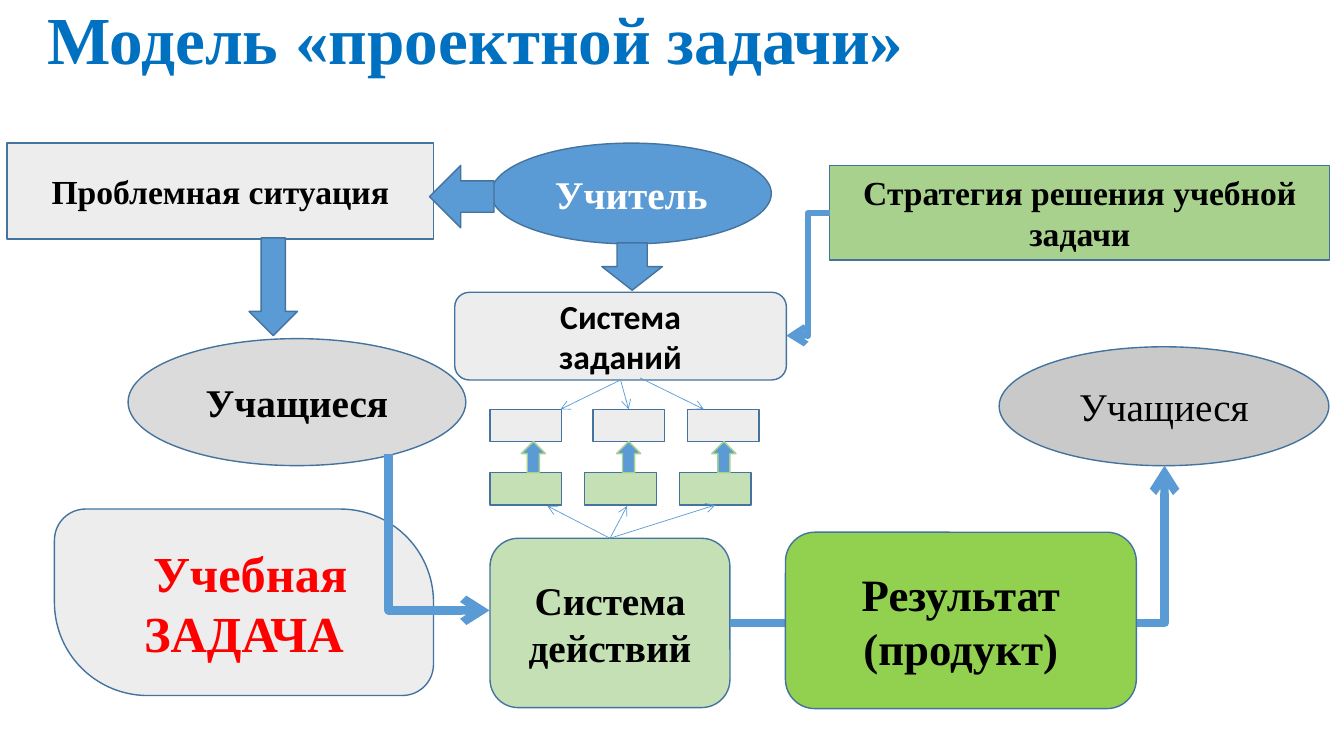
from lxml import etree
from pptx import Presentation
from pptx.dml.color import RGBColor
from pptx.enum.shapes import MSO_CONNECTOR, MSO_SHAPE
from pptx.enum.text import MSO_ANCHOR, PP_ALIGN
from pptx.oxml.ns import qn
from pptx.util import Inches, Pt

RECT, ROUND, OVAL = MSO_SHAPE.RECTANGLE, MSO_SHAPE.ROUNDED_RECTANGLE, MSO_SHAPE.OVAL
DIAGONAL = MSO_SHAPE.ROUND_2_DIAG_RECTANGLE
DOWN, LEFT, UP = MSO_SHAPE.DOWN_ARROW, MSO_SHAPE.LEFT_ARROW, MSO_SHAPE.UP_ARROW
STRAIGHT, ELBOW = MSO_CONNECTOR.STRAIGHT, MSO_CONNECTOR.ELBOW
MIDDLE, CENTER = MSO_ANCHOR.MIDDLE, PP_ALIGN.CENTER
TOP_SIDE, BOTTOM_SIDE = 0, 2

COLORS = {
    "title": "0070C0", "blue": "5B9BD5", "outline": "43739E", "black": "000000",
    "white": "FFFFFF", "red": "FF0000", "pale": "EDEDED", "light gray": "DBDBDB",
    "gray": "C9C9C9", "pale green": "C5E0B4", "green": "A9D18E", "bright green": "92D050",
}
SERIF, SANS = "Times New Roman", "Calibri"
TITLE = "Модель «проектной задачи»"

# name: preset, (left, top, width, height), fill, lines, size, font, text colour, bold
NODES = {
    "tasks": (ROUND, (4.51, 2.9, 3.29, 0.87), "pale",
              ["Система", "заданий"], 24, SANS, "black", True),
    "learning task": (DIAGONAL, (0.54, 5.05, 3.76, 1.85), "pale",
                      [" Учебная", "ЗАДАЧА"], 36, SERIF, "red", True),
    "teacher": (OVAL, (4.87, 1.42, 2.78, 1), "blue",
                ["Учитель"], 28, SERIF, "white", True),
    "pupils": (OVAL, (1.27, 3.36, 3.35, 1.26), "light gray",
               ["Учащиеся"], 28, SERIF, "black", True),
    "actions": (ROUND, (4.86, 5.34, 2.38, 1.68), "pale green",
                ["Система действий"], 28, SERIF, "black", True),
    "pupils after": (OVAL, (9.91, 3.44, 3.27, 1.18), "gray",
                     ["Учащиеся"], 28, SERIF, "black", False),
    "strategy": (RECT, (8.23, 1.64, 4.96, 0.94), "green",
                 ["Стратегия решения учебной задачи"], 24, SERIF, "black", True),
    "problem": (RECT, (0.07, 1.42, 4.23, 0.95), "pale",
                ["Проблемная ситуация"], 24, SERIF, "black", True),
}
RESULT = (ROUND, (7.79, 5.28, 3.48, 1.75), "bright green",
          ["Результат", "(продукт)"], 32, SERIF, "black", True)

BLOCK_ARROWS = [
    (DOWN, (5.97, 2.41, 0.6, 0.47)),
    (LEFT, (4.26, 1.64, 0.64, 0.62)),
    (DOWN, (2.47, 2.36, 0.48, 0.97)),
]

# Small boxes between tasks and actions
SMALL_SIZE = (0.71, 0.32)
TASK_LEFTS, TASK_TOP = [4.86, 5.88, 6.82], 4.06
ACTION_LEFT, ACTION_TOP, ACTION_STEP = 4.86, 4.69, 0.94
UP_LEFT, UP_TOP, UP_STEP = 5.17, 4.38, 0.945

# start, end, start node, row and index of the box joined at the end
FAN_LINES = [
    ((6.15, 3.77), (6.23, 4.06), "tasks", ("task", 1)),
    ((6.15, 3.77), (5.56, 4.06), "tasks", None),
    ((6.35, 3.75), (6.98, 4.06), None, None),
    ((6.05, 5.34), (7.1, 5.01), "actions", ("action", 2)),
    ((6.05, 5.34), (6.22, 5.02), "actions", None),
    ((6.05, 5.34), (5.43, 5.02), "actions", None),
]
# start, end, width, preset, quarter turns
ELBOWS = [
    ((5.13, 4.78), (3.58, 5.78), 6, "bentConnector2", 3),
    ((7.24, 6.18), (11.55, 4.62), 6, "bentConnector2", 0),
    ((8.23, 2.11), (7.8, 3.33), 4.5, "bentConnector3", 0),
]


def color(name):
    return RGBColor.from_string(COLORS[name])


def add_text(frame, lines, size, font, ink, bold, align):
    frame.word_wrap = True
    frame.vertical_anchor = MIDDLE
    for index, line in enumerate(lines):
        para = frame.paragraphs[0] if index == 0 else frame.add_paragraph()
        para.alignment = align
        span = para.add_run()
        span.text = line
        span.font.size, span.font.name, span.font.bold = Pt(size), font, bold
        span.font.color.rgb = color(ink)


def add_box(page, preset, place, fill, outline="outline"):
    box = page.shapes.add_shape(preset, *map(Inches, place))
    box.shadow.inherit = False
    box.fill.solid()
    box.fill.fore_color.rgb = color(fill)
    box.line.color.rgb = color(outline)
    box.line.width = Pt(1)
    return box


def add_node(page, preset, place, fill, lines, size, font, ink, bold):
    box = add_box(page, preset, place, fill)
    if preset == DIAGONAL:
        box.adjustments[0], box.adjustments[1] = 0.167, 0.5
    add_text(box.text_frame, lines, size, font, ink, bold, CENTER)
    return box


def add_arrow(page, kind, start, end, width):
    arrow = page.shapes.add_connector(kind, *map(Inches, start + end))
    arrow.line.color.rgb = color("blue")
    arrow.line.width = Pt(width)
    etree.SubElement(arrow.line._get_or_add_ln(), qn("a:tailEnd"), type="arrow")
    etree.SubElement(arrow._element.spPr, qn("a:effectLst"))
    return arrow


def main():
    deck = Presentation()
    deck.slide_width, deck.slide_height = Inches(13.33), Inches(7.5)
    page = deck.slides.add_slide(deck.slide_layouts[5])

    # Title
    title = page.shapes.title
    title.left, title.top, title.width, title.height = map(Inches, (0.37, 0.01, 12.44, 0.83))
    add_text(title.text_frame, [TITLE], 48, SERIF, "title", True, PP_ALIGN.LEFT)
    title.text_frame.paragraphs[0].line_spacing = 0.9

    # Main nodes and block arrows
    nodes = {name: add_node(page, *node) for name, node in NODES.items()}
    for preset, place in BLOCK_ARROWS:
        add_box(page, preset, place, "blue")

    # Rows of small boxes with arrows between them
    rows = {"task": [], "action": []}
    for index, task_left in enumerate(TASK_LEFTS):
        action_left = ACTION_LEFT + index * ACTION_STEP
        rows["task"].append(add_box(page, RECT, (task_left, TASK_TOP, *SMALL_SIZE), "pale"))
        rows["action"].append(
            add_box(page, RECT, (action_left, ACTION_TOP, *SMALL_SIZE), "pale green"))
        add_box(page, UP, (UP_LEFT + index * UP_STEP, UP_TOP, 0.24, 0.31), "blue", "green")

    # Thin fan lines
    for start, end, source, target in FAN_LINES:
        arrow = add_arrow(page, STRAIGHT, start, end, 0.5)
        if source:
            arrow.begin_connect(nodes[source], BOTTOM_SIDE if source == "tasks" else TOP_SIDE)
        if target:
            row, index = target
            arrow.end_connect(rows[row][index], TOP_SIDE if row == "task" else BOTTOM_SIDE)

    # Thick elbow arrows, with the result box over the last stretch
    for start, end, width, preset, turns in ELBOWS:
        properties = add_arrow(page, ELBOW, start, end, width)._element.spPr
        properties.find(qn("a:prstGeom")).set("prst", preset)
        if turns:
            properties.find(qn("a:xfrm")).set("rot", str(turns * 90 * 60000))
    add_node(page, *RESULT)

    deck.save("out.pptx")


if __name__ == "__main__":
    main()
